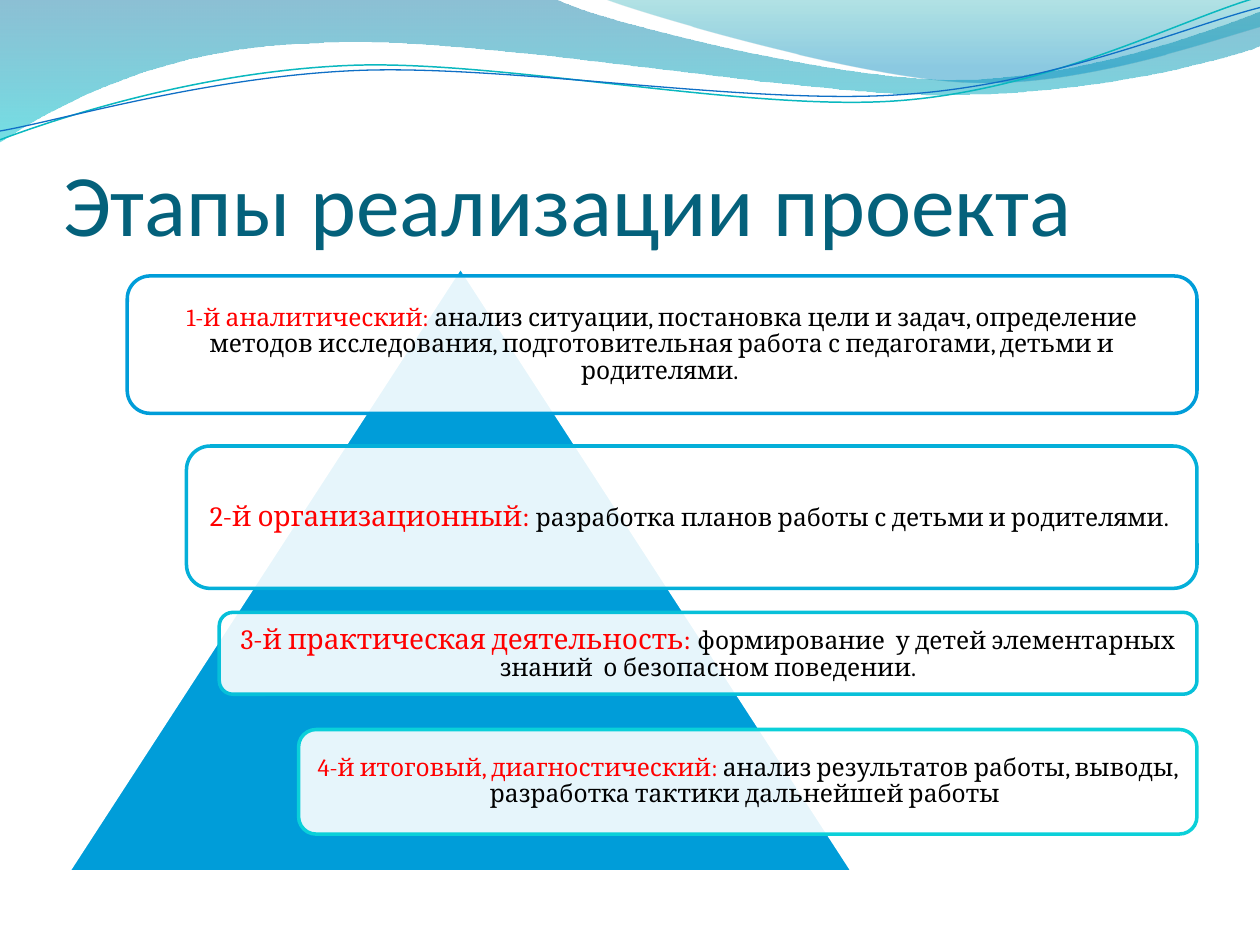
from lxml.etree import SubElement
from pptx import Presentation
from pptx.dml.color import RGBColor
from pptx.enum.shapes import MSO_SHAPE as Shape
from pptx.enum.text import MSO_ANCHOR as Anchor, MSO_AUTO_SIZE as AutoSize, PP_ALIGN as Align
from pptx.oxml.ns import qn
from pptx.util import Inches, Pt

COLORS = {
    "title": "04617B", "heading": "FF0000", "body": "000000", "white": "FFFFFF",
    "pyramid": "009DD9", "wave_blue": "0074A1", "wave_cyan": "00C6CF",
    "crest_teal": "00A1A9", "crest_blue": "008BBF",
    "line_teal": "0AB8BF", "line_blue": "0F6FC6",
    "stage1": "009DD9", "stage2": "04AFD9", "stage3": "07C0D9", "stage4": "0BD0D9",
}

TITLE = "Этапы реализации проекта"
RIGHT_EDGE = 9.5

# left, top, height, outline, inset, heading size, heading, description
STAGES = [
    (1.01, 2.19, 1.09, "stage1", 0.06, 14, "1-й аналитический:",
     " анализ ситуации, постановка цели и задач, определение методов исследования, "
     "подготовительная работа с педагогами, детьми и родителями. "),
    (1.48, 3.54, 1.13, "stage2", 0.07, 16, "2-й организационный: ",
     "разработка планов работы с детьми и родителями. "),
    (1.74, 4.86, 0.65, "stage3", 0.07, 16, "3-й практическая деятельность: ",
     "формирование  у детей элементарных знаний  о безопасном поведении."),
    (2.37, 5.79, 0.83, "stage4", 0.06, 14, "4-й итоговый, диагностический: ",
     "анализ результатов работы, выводы, разработка тактики дальнейшей работы "),
]

# Outlines: each step lists one point (straight) or three (Bézier curve)
WAVE = [
    [(0, 0)], [(4.4, -0.01)],
    [(4.76, 0.17), (6.64, 0.63), (7.58, 0.63)],
    [(8.53, 0.63), (9.58, 0.26), (10, 0.09)],
    [(10.01, 0.36)],
    [(9.83, 0.44), (8.7, 0.76), (7.46, 0.75)],
    [(6.22, 0.75), (3.82, 0.28), (2.57, 0.34)],
    [(1.29, 0.36), (0.46, 0.83), (-0.01, 1.13)],
]
CREST = [
    [(4.79, -0.01)],
    [(5.09, 0.11), (6.82, 0.62), (7.69, 0.65)],
    [(8.56, 0.69), (9.61, 0.32), (10, 0.21)],
    [(10, 0)],
]
TEAL_LINE = [
    [(0, 1.11)],
    [(0.48, 0.93), (1.58, 0.57), (2.77, 0.52)],
    [(3.95, 0.47), (5.93, 0.89), (7.13, 0.8)],
    [(8.33, 0.71), (9.38, 0.15), (9.98, -0.02)],
]
BLUE_LINE = [
    [(0, 1.04)],
    [(0.47, 0.96), (1.64, 0.61), (2.83, 0.56)],
    [(4.03, 0.51), (5.97, 0.84), (7.17, 0.75)],
    [(8.36, 0.67), (9.41, 0.21), (10, 0.06)],
]
# outline, gradient stops (position, colour, opacity in percent)
FILLED_WAVES = [
    (WAVE, [(0, "wave_blue", 45), (1, "wave_cyan", 55)]),
    (CREST, [(0, "crest_teal", 30), (0.8, "crest_blue", 45)]),
]
LINE_WAVES = [(TEAL_LINE, "line_teal", 0.85), (BLUE_LINE, "line_blue", 0.75)]


def rgb(name):
    return RGBColor.from_string(COLORS[name])


def set_opacity(shape, percents):
    fill_colors = list(shape.element.spPr.iter(qn("a:srgbClr")))
    for color, percent in zip(fill_colors, percents):
        SubElement(color, qn("a:alpha")).set("val", str(percent * 1000))


def add_outline(slide, outline, closed):
    ends = [(Inches(x), Inches(y)) for x, y in (step[-1] for step in outline)]
    builder = slide.shapes.build_freeform(*ends[0], scale=1.0)
    builder.add_line_segments(ends[1:], close=closed)
    shape = builder.convert_to_shape()
    shape.shadow.inherit = False
    # Turn the three-point steps into curves
    segments = list(shape.element.spPr.iter(qn("a:lnTo")))
    for segment, step in zip(segments, outline[1:]):
        if len(step) == 3:
            segment.tag = qn("a:cubicBezTo")
            segment.remove(segment[0])
            for x, y in step:
                point = SubElement(segment, qn("a:pt"))
                point.set("x", str(Inches(x) - shape.left))
                point.set("y", str(Inches(y) - shape.top))
    return shape


def add_run(paragraph, text, font_name, size, color):
    run = paragraph.add_run()
    run.text = text
    run.font.name = font_name
    run.font.size = Pt(size)
    run.font.color.rgb = rgb(color)


def add_box(slide, kind, left, top, width, height, fill, line):
    shape = slide.shapes.add_shape(kind, Inches(left), Inches(top), Inches(width), Inches(height))
    shape.shadow.inherit = False
    shape.fill.solid()
    shape.fill.fore_color.rgb = rgb(fill)
    shape.line.color.rgb = rgb(line)
    shape.line.width = Pt(2)
    return shape


def set_insets(frame, left, top, right, bottom):
    frame.margin_left, frame.margin_top = Inches(left), Inches(top)
    frame.margin_right, frame.margin_bottom = Inches(right), Inches(bottom)


presentation = Presentation()
presentation.slide_width, presentation.slide_height = Inches(10), Inches(7.5)
slide = presentation.slides.add_slide(presentation.slide_layouts[5])

# Waves along the top
for outline, stops in FILLED_WAVES:
    wave = add_outline(slide, outline, closed=True)
    wave.line.fill.background()
    wave.fill.gradient()
    wave.fill.gradient_angle = 270
    for stop, (position, color, _) in zip(wave.fill.gradient_stops, stops):
        stop.position = position
        stop.color.rgb = rgb(color)
    set_opacity(wave, [opacity for _, _, opacity in stops])
for outline, color, width in LINE_WAVES:
    wave = add_outline(slide, outline, closed=False)
    wave.fill.background()
    wave.line.color.rgb = rgb(color)
    wave.line.width = Pt(width)

# Title
title = slide.shapes.title
title.left, title.top, title.width, title.height = map(Inches, (0.5, 0.77, 9, 1.25))
frame = title.text_frame
frame.auto_size = AutoSize.NONE
frame.word_wrap = True
frame.vertical_anchor = Anchor.BOTTOM
set_insets(frame, 0, 0.05, 0, 0)
frame.paragraphs[0].alignment = Align.LEFT
add_run(frame.paragraphs[0], TITLE, "Calibri", 50, "title")

# Pyramid with the stages over it
add_box(slide, Shape.ISOSCELES_TRIANGLE, 0.54, 2.12, 6.23, 4.8, "pyramid", "white")
for left, top, height, outline, inset, size, heading, description in STAGES:
    box = add_box(slide, Shape.ROUNDED_RECTANGLE, left, top, RIGHT_EDGE - left, height,
                  "white", outline)
    set_opacity(box, [90])
    frame = box.text_frame
    frame.word_wrap = True
    frame.vertical_anchor = Anchor.MIDDLE
    set_insets(frame, inset, inset, inset, inset)
    paragraph = frame.paragraphs[0]
    paragraph.alignment = Align.CENTER
    paragraph.line_spacing = 0.9
    add_run(paragraph, heading, "Cambria", size, "heading")
    add_run(paragraph, description, "Cambria", 14, "body")

presentation.save("out.pptx")
